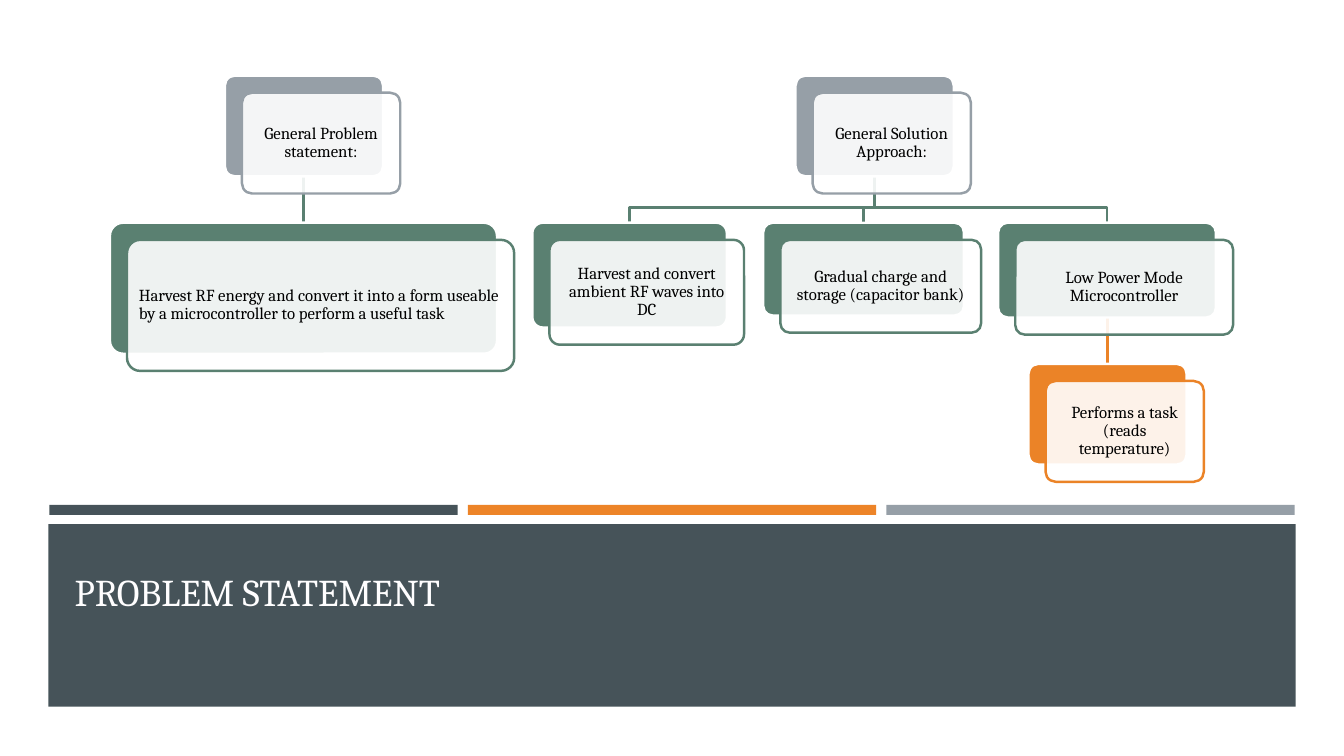
import dataclasses

import pptx
import pptx.dml.color
import pptx.enum.shapes
import pptx.enum.text
import pptx.oxml.ns
import pptx.util
from lxml import etree

Inches = pptx.util.Inches
Pt = pptx.util.Pt
Shape = pptx.enum.shapes.MSO_SHAPE
Align = pptx.enum.text.PP_ALIGN
Anchor = pptx.enum.text.MSO_ANCHOR
qn = pptx.oxml.ns.qn


@dataclasses.dataclass(frozen=True)
class Theme:
    font: str = "Cambria"
    white: str = "FFFFFF"
    black: str = "000000"
    title: str = "FFFEFF"
    slate: str = "465359"
    gray: str = "969FA7"
    green: str = "5A8071"
    orange: str = "ED8428"
    amber: str = "EB8327"
    head: float = 27
    body: float = 12
    line: float = 1.75


@dataclasses.dataclass(frozen=True)
class Card:
    text: str
    left: float
    top: float
    width: float
    height: float
    color: str
    align: Align = Align.CENTER

    @property
    def mid(self):
        return self.left + self.width / 2

    @property
    def base(self):
        return self.top + self.height


THEME = Theme()
SHIFT = 0.17
BEND = 0.15


def rgb(code):
    return pptx.dml.color.RGBColor.from_string(code)


def paint(shape, fill, line=None):
    shape.shadow.inherit = False
    shape.fill.solid()
    shape.fill.fore_color.rgb = rgb(fill)
    if line:
        shape.line.color.rgb = rgb(line)
        shape.line.width = Pt(THEME.line)
    else:
        shape.line.fill.background()


def add_box(slide, kind, left, top, width, height):
    return slide.shapes.add_shape(
        kind, Inches(left), Inches(top), Inches(width), Inches(height))


def add_bar(slide, left, top, width, height, color):
    paint(add_box(slide, Shape.RECTANGLE, left, top, width, height), color)


def write(frame, text, size, color, align):
    frame.word_wrap = True
    frame.auto_size = pptx.enum.text.MSO_AUTO_SIZE.NONE
    frame.vertical_anchor = Anchor.MIDDLE
    para = frame.paragraphs[0]
    para.alignment = align
    para.line_spacing = 0.9
    run = para.add_run()
    run.text = text
    run.font.name = THEME.font
    run.font.size = Pt(size)
    run.font.color.rgb = rgb(color)


def add_title(slide, text):
    title = slide.shapes.title
    title.left, title.top = Inches(0.64), Inches(5.42)
    title.width, title.height = Inches(12.06), Inches(1.36)
    frame = title.text_frame
    write(frame, text, THEME.head, THEME.title, Align.LEFT)
    frame.margin_left = frame.margin_right = Inches(0.1)
    frame.margin_top, frame.margin_bottom = Inches(0.05), Inches(0.45)
    title.element.getparent().append(title.element)


def add_panel(slide, card, shift):
    panel = add_box(slide, Shape.ROUNDED_RECTANGLE, card.left + shift,
                    card.top + shift, card.width, card.height)
    panel.adjustments[0] = 0.1
    return panel


def add_card(slide, card):
    paint(add_panel(slide, card, 0), card.color, THEME.white)
    front = add_panel(slide, card, SHIFT)
    paint(front, THEME.white, card.color)
    tint = front.element.spPr.find(qn("a:solidFill")).find(qn("a:srgbClr"))
    etree.SubElement(tint, qn("a:alpha"), val="90000")
    frame = front.text_frame
    frame.margin_left = frame.margin_right = Inches(0.08)
    frame.margin_top = frame.margin_bottom = Inches(0.08)
    write(frame, card.text, THEME.body, THEME.black, card.align)


def add_link(slide, start, end):
    if abs(start.mid - end.mid) < 0.02:
        link = slide.shapes.add_connector(
            pptx.enum.shapes.MSO_CONNECTOR.STRAIGHT,
            Inches(end.mid), Inches(start.base),
            Inches(end.mid), Inches(end.top))
        etree.SubElement(link.element.spPr, qn("a:effectLst"))
    else:
        bend = end.top - BEND
        spots = [(start.mid, bend), (end.mid, bend), (end.mid, end.top)]
        pen = slide.shapes.build_freeform(
            Inches(start.mid), Inches(start.base))
        pen.add_line_segments(
            [(Inches(x), Inches(y)) for x, y in spots], close=False)
        link = pen.convert_to_shape()
        link.shadow.inherit = False
        link.fill.background()
    link.line.color.rgb = rgb(end.color)
    link.line.width = Pt(THEME.line)


def main():
    deck = pptx.Presentation()
    deck.slide_width, deck.slide_height = Inches(13.33), Inches(7.5)
    slide = deck.slides.add_slide(deck.slide_layouts[5])
    slide.background.fill.solid()
    slide.background.fill.fore_color.rgb = rgb(THEME.white)

    for i, color in enumerate((THEME.slate, THEME.orange, THEME.gray)):
        add_bar(slide, 0.49 + 4.15 * i, 5.01, 4.05, 0.1, color)
    add_bar(slide, 0.48, 5.2, 12.37, 1.81, THEME.slate)
    add_title(slide, "PROBLEM STATEMENT")

    issue = Card("General Problem statement:",
                 2.23, 0.75, 1.57, 1, THEME.gray)
    need = Card("Harvest RF energy and convert it into a form useable by a "
                "microcontroller to perform a useful task",
                1.09, 2.21, 3.84, 1.3, THEME.green, Align.LEFT)
    plan = Card("General Solution Approach:",
                7.89, 0.75, 1.57, 1, THEME.gray)
    waves = Card("Harvest and convert ambient RF waves into DC",
                 5.28, 2.21, 1.93, 1.04, THEME.green)
    store = Card("Gradual charge and storage (capacitor bank)",
                 7.57, 2.21, 1.99, 0.92, THEME.green)
    chip = Card("Low Power Mode Microcontroller",
                9.9, 2.21, 2.16, 0.94, THEME.green)
    task = Card("Performs a task (reads temperature)",
                10.2, 3.61, 1.57, 1, THEME.amber)

    links = [(chip, task), (plan, chip), (plan, store), (plan, waves),
             (issue, need)]
    for start, end in links:
        add_link(slide, start, end)
    for card in (issue, need, plan, waves, store, chip, task):
        add_card(slide, card)

    deck.save("out.pptx")


if __name__ == "__main__":
    main()
